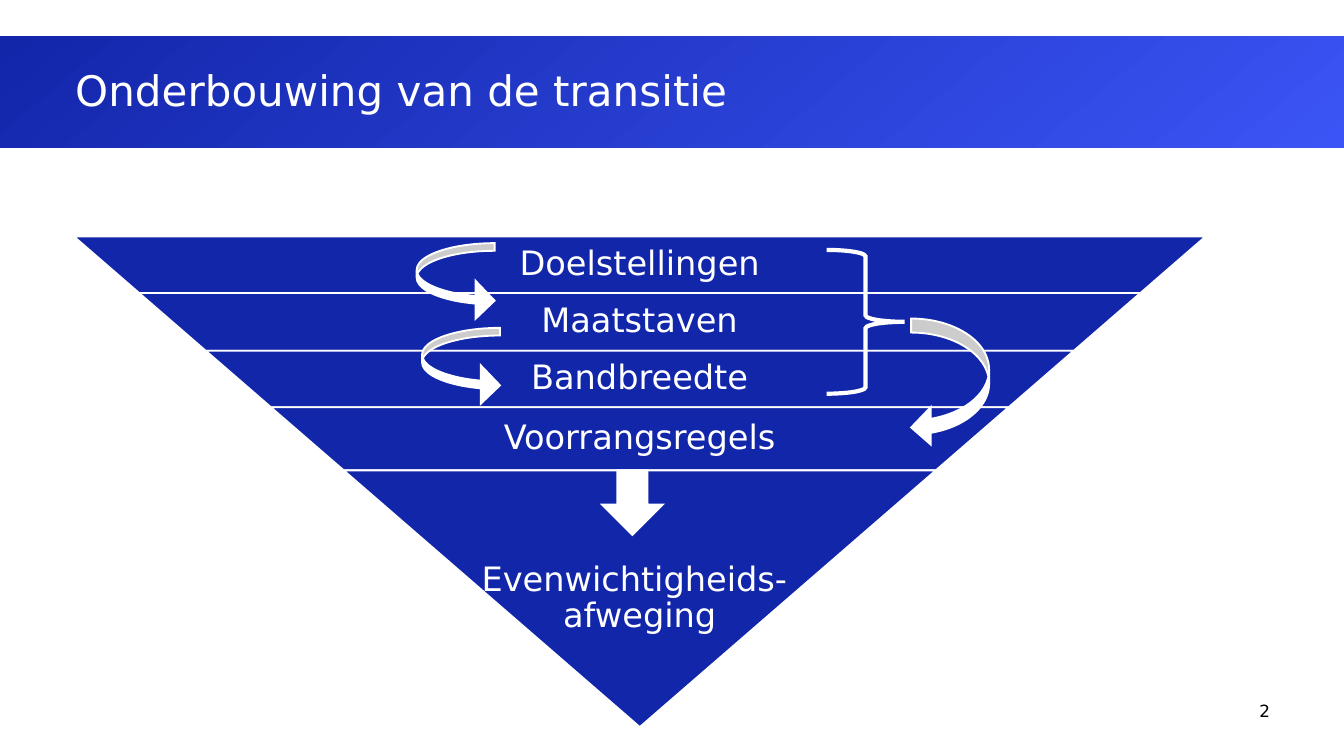
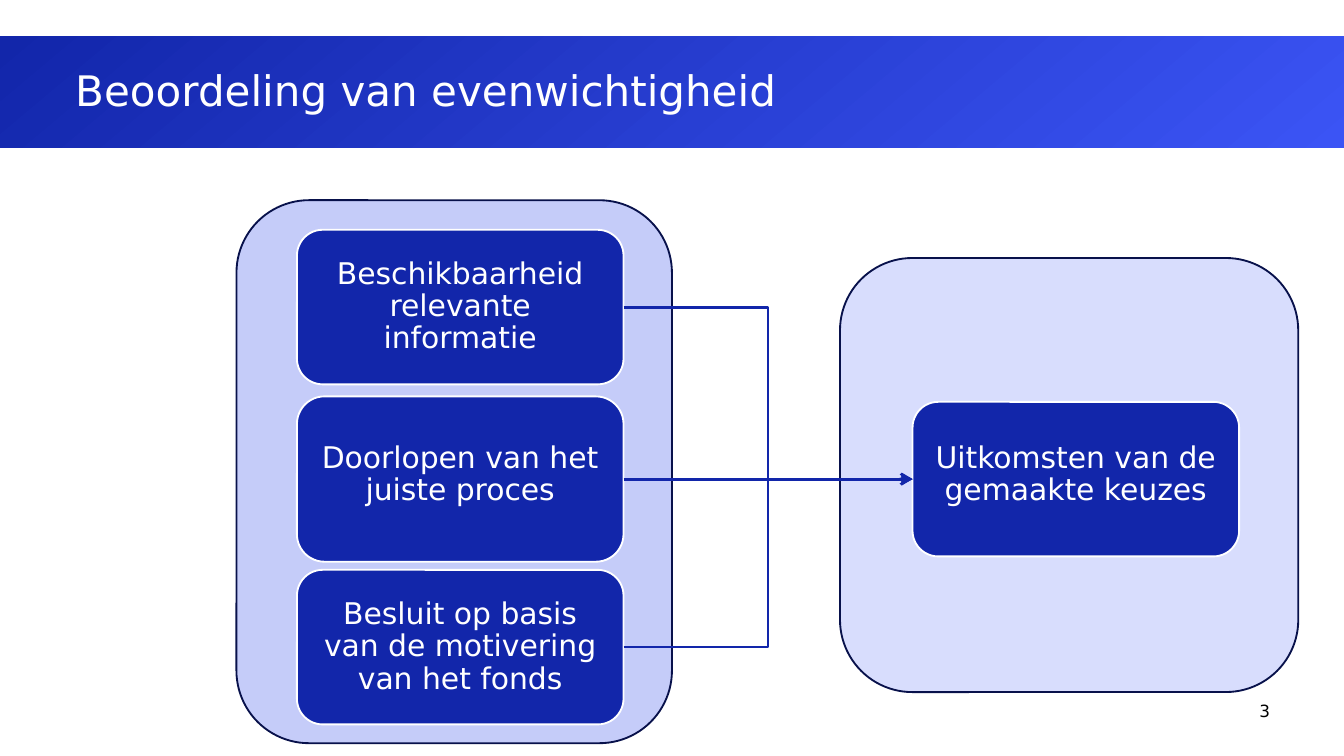
from dataclasses import dataclass

from pptx import Presentation
from pptx.dml.color import RGBColor
from pptx.enum.shapes import MSO_CONNECTOR, MSO_SHAPE
from pptx.enum.text import MSO_ANCHOR, MSO_AUTO_SIZE, PP_ALIGN
from pptx.oxml.ns import qn
from pptx.util import Inches, Pt
from lxml import etree

RECTANGLE = MSO_SHAPE.RECTANGLE
ROUNDED = MSO_SHAPE.ROUNDED_RECTANGLE
TRAPEZOID = MSO_SHAPE.TRAPEZOID
CURVED_ARROW = MSO_SHAPE.CURVED_RIGHT_ARROW
DOWN_ARROW = MSO_SHAPE.DOWN_ARROW
RIGHT_BRACE = MSO_SHAPE.RIGHT_BRACE
ELBOW = MSO_CONNECTOR.ELBOW
LEFT, CENTER, RIGHT = PP_ALIGN.LEFT, PP_ALIGN.CENTER, PP_ALIGN.RIGHT
MIDDLE = MSO_ANCHOR.MIDDLE
NO_AUTOFIT = MSO_AUTO_SIZE.NONE

FONT = "DejaVu Sans"
BLUE = "1226AA"
BRIGHT_BLUE = "3B54F5"
NAVY = "08114B"
LILAC = "C5CCF9"
PALE_LILAC = "D8DDFD"
WHITE = "FFFFFF"
BLACK = "000000"
LEFT_SITE, RIGHT_SITE = 1, 3

SLIDE_WIDTH = Inches(10)
SLIDE_HEIGHT = SLIDE_WIDTH * 9 // 16
FUNNEL_CENTER = 4.76
FUNNEL_TOP = 1.76
FUNNEL_WIDTH = 8.42
TEXT_SHARE = 0.65
CARD_WIDTH = 2.43


@dataclass(frozen=True)
class Box:
    left: float
    top: float
    width: float
    height: float


@dataclass(frozen=True)
class Layer:
    text: str
    height: float


@dataclass(frozen=True)
class CurvedArrow:
    box: Box
    adjustments: tuple[float, ...]
    flipped: bool = False


@dataclass(frozen=True)
class Panel:
    box: Box
    fill: str


@dataclass(frozen=True)
class Card:
    text: str
    left: float
    top: float
    height: float = 1.15
    bottom_margin: float = 0.03


LAYERS = [
    Layer("Doelstellingen", 0.42),
    Layer("Maatstaven", 0.43),
    Layer("Bandbreedte", 0.42),
    Layer("Voorrangsregels", 0.47),
    Layer("Evenwichtigheids- \vafweging", 1.91),
]
CURVED_ARROWS = [
    CurvedArrow(Box(3.1, 1.81, 0.58, 0.57), (0.1, 0.5, 0.25)),
    CurvedArrow(Box(6.78, 2.37, 0.58, 0.95), (0.18, 0.48, 0.25), True),
    CurvedArrow(Box(3.14, 2.44, 0.58, 0.57), (0.1, 0.5, 0.25)),
]
PANELS = [
    Panel(Box(6.25, 1.92, 3.41, 3.23), PALE_LILAC),
    Panel(Box(1.76, 1.49, 3.24, 4.04), LILAC),
]
CRITERIA = [
    Card("Beschikbaarheid relevante informatie", 2.21, 1.71),
    Card("Doorlopen van het juiste proces", 2.21, 2.95, 1.23, 0.09),
    Card("Besluit op basis van de motivering van het fonds", 2.21, 4.24),
]
OUTCOME = Card("Uitkomsten van de gemaakte keuzes", 6.79, 2.99, 1.15, 0.09)


def color(value: str) -> RGBColor:
    return RGBColor.from_string(value)


def emu(box: Box) -> tuple:
    return Inches(box.left), Inches(box.top), Inches(box.width), Inches(box.height)


def write(shape, text: str, size: float, text_color: str, alignment,
          margins: tuple[float, float, float, float] = (0, 0, 0, 0),
          line_spacing: float = 1.0) -> None:
    frame = shape.text_frame
    frame.word_wrap = True
    frame.auto_size = NO_AUTOFIT
    frame.vertical_anchor = MIDDLE
    (frame.margin_left, frame.margin_top,
     frame.margin_right, frame.margin_bottom) = map(Inches, margins)
    paragraph = frame.paragraphs[0]
    paragraph.text = text
    paragraph.alignment = alignment
    paragraph.line_spacing = line_spacing
    for run in paragraph.runs:
        run.font.name = FONT
        run.font.size = Pt(size)
        run.font.color.rgb = color(text_color)


def add_shape(slide, kind, box: Box, fill: str | None, line: str | None,
              weight: float = 1, adjustments: tuple[float, ...] = ()):
    shape = slide.shapes.add_shape(kind, *emu(box))
    shape.shadow.inherit = False
    if fill:
        shape.fill.solid()
        shape.fill.fore_color.rgb = color(fill)
    else:
        shape.fill.background()
    if line:
        shape.line.color.rgb = color(line)
        shape.line.width = Pt(weight)
        etree.SubElement(shape.line._get_or_add_ln(), qn("a:miter"), lim="800000")
    else:
        shape.line.fill.background()
    for index, value in enumerate(adjustments):
        shape.adjustments[index] = value
    return shape


def add_text(slide, text: str, box: Box, size: float, text_color: str, alignment,
             margin: float = 0, line_spacing: float = 1.0) -> None:
    shape = slide.shapes.add_textbox(*emu(box))
    write(shape, text, size, text_color, alignment, (margin,) * 4, line_spacing)


def add_title_band(slide, layout) -> None:
    band = add_shape(slide, RECTANGLE, Box(0, 0.27, 10, 0.83), BLUE, None)
    band.fill.gradient()
    band.fill.gradient_angle = 310
    for stop, value in zip(band.fill.gradient_stops, (BLUE, BRIGHT_BLUE)):
        stop.color.rgb = color(value)
    layout.shapes._spTree.insert(2, band._element)


def add_slide(presentation, layout, title: str, number: int):
    slide = presentation.slides.add_slide(layout)
    heading = slide.shapes.title
    heading.left, heading.top, heading.width, heading.height = emu(
        Box(0.56, 0.47, 8.89, 0.4))
    write(heading, title, 22.5, WHITE, LEFT)
    add_text(slide, str(number), Box(8.88, 5.18, 0.57, 0.22), 9, BLACK, RIGHT)
    return slide


def add_funnel(slide) -> None:
    slope = FUNNEL_WIDTH / 2 / sum(layer.height for layer in LAYERS)
    top, width = FUNNEL_TOP, FUNNEL_WIDTH
    for layer in LAYERS:
        box = Box(FUNNEL_CENTER - width / 2, top, width, layer.height)
        shape = add_shape(slide, TRAPEZOID, box, BLUE, WHITE, adjustments=(slope,))
        shape.rotation = 180
        text_width = width if layer is LAYERS[-1] else width * TEXT_SHARE
        text_box = Box(FUNNEL_CENTER - text_width / 2, top, text_width, layer.height)
        add_text(slide, layer.text, text_box, 18, WHITE, CENTER, 0.03, 0.9)
        top += layer.height
        width -= 2 * slope * layer.height


def add_curved_arrow(slide, arrow: CurvedArrow) -> None:
    shape = add_shape(slide, CURVED_ARROW, arrow.box, WHITE, WHITE,
                      adjustments=arrow.adjustments)
    if arrow.flipped:
        shape._element.spPr.find(qn("a:xfrm")).set("flipH", "1")


def add_card(slide, card: Card):
    box = Box(card.left, card.top, CARD_WIDTH, card.height)
    shape = add_shape(slide, ROUNDED, box, BLUE, WHITE)
    write(shape, card.text, 16, WHITE, CENTER,
          (0.07, 0.03, 0.07, card.bottom_margin), 0.9)
    return shape


def connect(slide, source, target, head: str) -> None:
    connector = slide.shapes.add_connector(ELBOW, 0, 0, 0, 0)
    connector.begin_connect(source, RIGHT_SITE)
    connector.end_connect(target, LEFT_SITE)
    connector.line.color.rgb = color(BLUE)
    connector.line.width = Pt(1.5)
    etree.SubElement(connector.line._get_or_add_ln(), qn("a:tailEnd"), type=head)
    etree.SubElement(connector._element.spPr, qn("a:effectLst"))


def build_foundation(slide) -> None:
    add_funnel(slide)
    for arrow in CURVED_ARROWS:
        add_curved_arrow(slide, arrow)
    add_shape(slide, RIGHT_BRACE, Box(6.15, 1.86, 0.58, 1.07), None, WHITE, 2.25)
    add_shape(slide, DOWN_ARROW, Box(4.48, 3.5, 0.45, 0.48), WHITE, WHITE)


def build_assessment(slide) -> None:
    for panel in PANELS:
        add_shape(slide, ROUNDED, panel.box, panel.fill, NAVY)
    criteria = [add_card(slide, card) for card in CRITERIA]
    outcome = add_card(slide, OUTCOME)
    for criterion, head in zip(criteria, ("triangle", "triangle", "arrow")):
        connect(slide, criterion, outcome, head)


def main() -> None:
    presentation = Presentation()
    presentation.slide_width = SLIDE_WIDTH
    presentation.slide_height = SLIDE_HEIGHT
    layout = presentation.slide_layouts[5]
    foundation = add_slide(presentation, layout, "Onderbouwing van de transitie", 2)
    add_title_band(foundation, layout)
    build_foundation(foundation)
    assessment = add_slide(presentation, layout, "Beoordeling van evenwichtigheid", 3)
    build_assessment(assessment)
    presentation.save("out.pptx")


if __name__ == "__main__":
    main()
